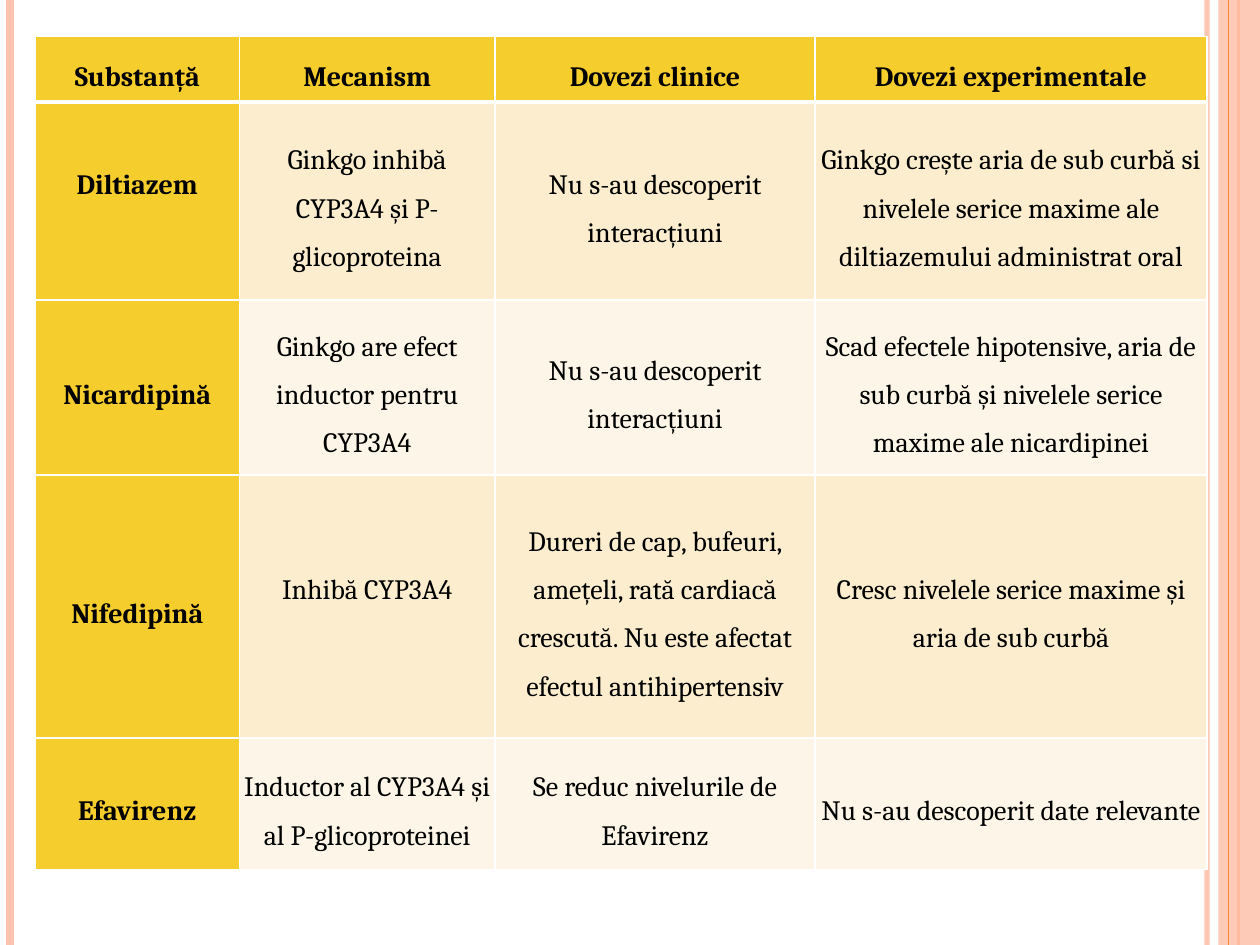
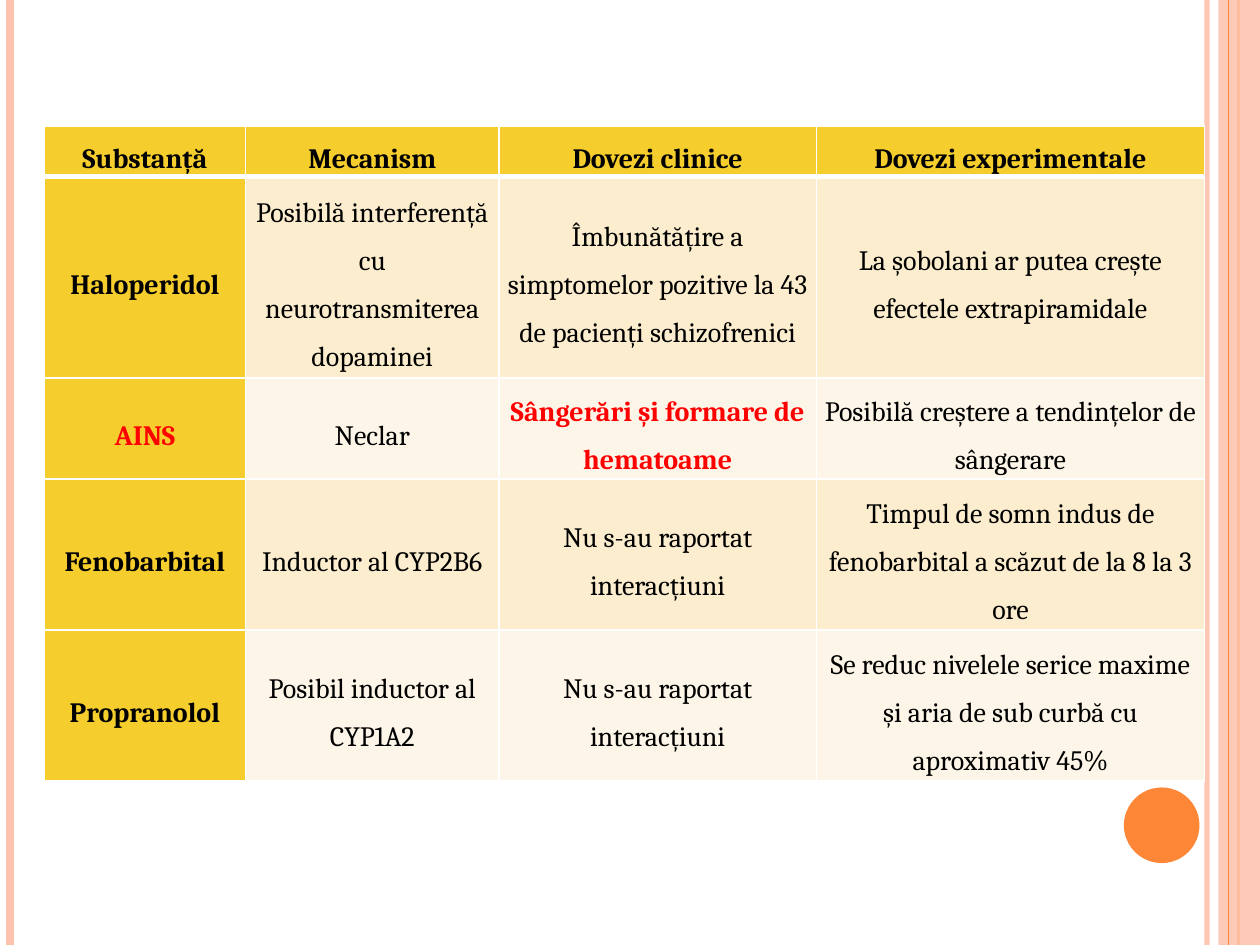
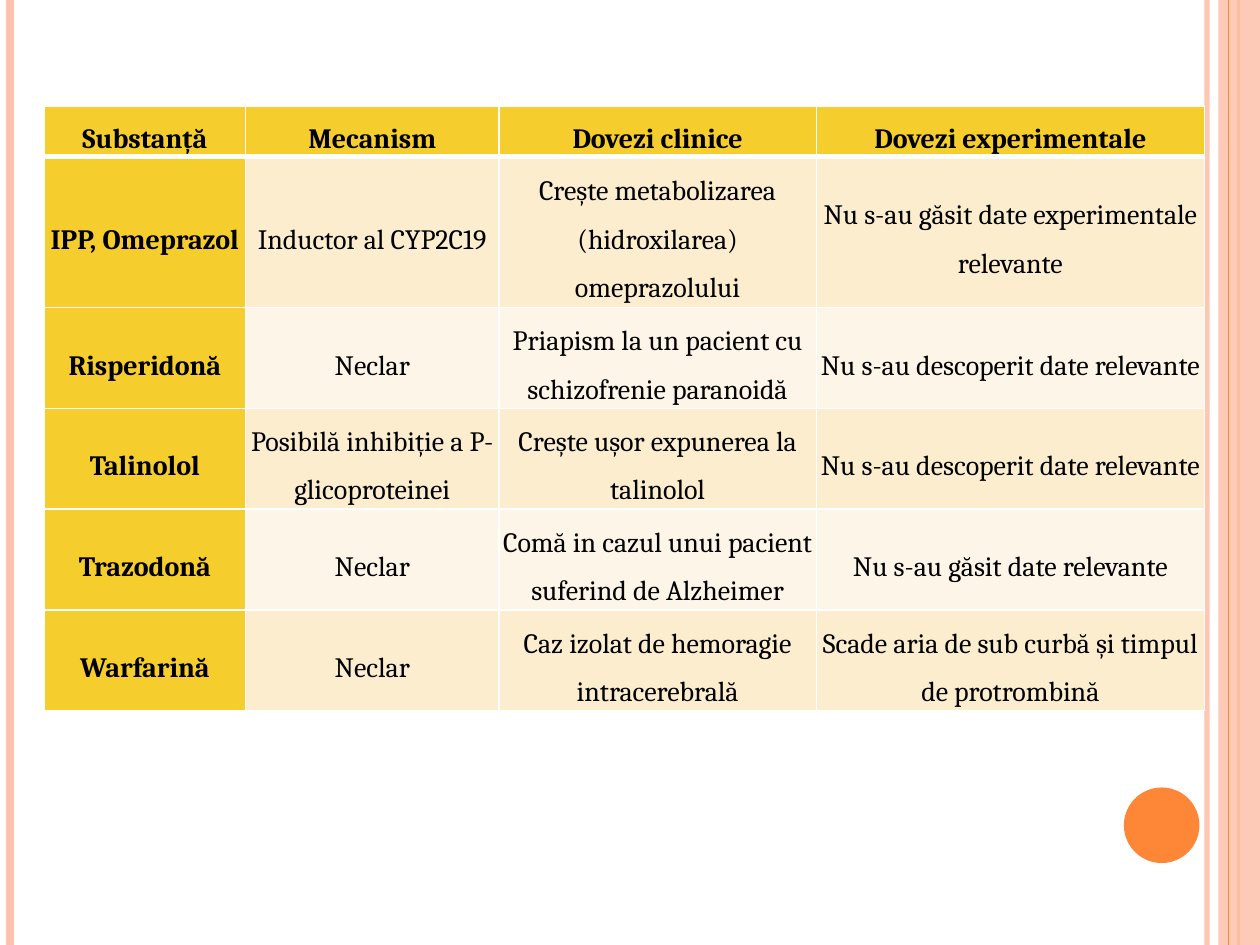
from lxml import etree
from pptx import Presentation
from pptx.dml.color import RGBColor
from pptx.enum.shapes import MSO_CONNECTOR as Link, MSO_SHAPE as Kind
from pptx.enum.text import MSO_ANCHOR as Anchor, PP_ALIGN as Align
from pptx.oxml.ns import qn
from pptx.util import Inches, Pt

PEACH, ORANGE, WHITE = "FEC3AE", "FE8637", "FFFFFF"
GOLD, BANDS = "F5CD2D", ("FBEDCD", "FDF6E8")
BLACK, RED = "000000", "FF0000"
FONT, SIZE = "Cambria", 16
LINE = 0.4

HEADS = ["Substanță", "Mecanism", "Dovezi clinice", "Dovezi experimentale"]
LIFT = {"lift": 0.38}
ALERT = {"bold": True, "color": RED}

HEART = [
    [("Diltiazem", LIFT), "Ginkgo inhibă CYP3A4 și P-glicoproteina",
     "Nu s-au descoperit interacțiuni",
     "Ginkgo crește aria de sub curbă si nivelele serice maxime ale diltiazemului administrat oral"],
    ["Nicardipină", "Ginkgo are efect inductor pentru CYP3A4",
     "Nu s-au descoperit interacțiuni",
     "Scad efectele hipotensive, aria de sub curbă și nivelele serice maxime ale nicardipinei"],
    ["Nifedipină", ("Inhibă CYP3A4", LIFT),
     "Dureri de cap, bufeuri, amețeli, rată cardiacă crescută. Nu este afectat efectul antihipertensiv",
     "Cresc nivelele serice maxime și aria de sub curbă"],
    ["Efavirenz", "Inductor al CYP3A4 și al P-glicoproteinei",
     "Se reduc nivelurile de Efavirenz", "Nu s-au descoperit date relevante"],
]
NERVE = [
    ["Haloperidol", "Posibilă interferență cu neurotransmiterea dopaminei",
     "Îmbunătățire a simptomelor pozitive la 43 de pacienți schizofrenici",
     "La șobolani ar putea crește efectele extrapiramidale"],
    [("AINS", ALERT), "Neclar", ("Sângerări și formare de hematoame", ALERT),
     "Posibilă creștere a tendințelor de sângerare"],
    ["Fenobarbital", "Inductor al CYP2B6", "Nu s-au raportat interacțiuni",
     "Timpul de somn indus de fenobarbital a scăzut de la 8 la 3 ore"],
    ["Propranolol", "Posibil inductor al CYP1A2", "Nu s-au raportat interacțiuni",
     "Se reduc nivelele serice maxime și aria de sub curbă cu aproximativ 45%"],
]
MIXED = [
    ["IPP, Omeprazol", "Inductor al CYP2C19",
     "Crește metabolizarea (hidroxilarea) omeprazolului",
     "Nu s-au găsit date experimentale relevante"],
    ["Risperidonă", "Neclar", "Priapism la un pacient cu schizofrenie paranoidă",
     "Nu s-au descoperit date relevante"],
    ["Talinolol", "Posibilă inhibiție a P-glicoproteinei",
     "Crește ușor expunerea la talinolol", "Nu s-au descoperit date relevante"],
    ["Trazodonă", "Neclar", "Comă in cazul unui pacient suferind de Alzheimer",
     "Nu s-au găsit date relevante"],
    ["Warfarină", "Neclar", "Caz izolat de hemoragie intracerebrală",
     "Scade aria de sub curbă și timpul de protrombină"],
]


def paint(target, color):
    """Give a fill one solid colour."""
    target.solid()
    target.fore_color.rgb = RGBColor.from_string(color)


def fade(shape, share):
    """Set the opacity, in percent, of the colours of a shape."""
    for tone in shape._element.spPr.iter(qn("a:srgbClr")):
        etree.SubElement(tone, qn("a:alpha"), val=str(share * 1000))


def stripe(slide, x, color, width):
    """Draw a full-height vertical line."""
    line = slide.shapes.add_connector(
        Link.STRAIGHT, Inches(x), 0, Inches(x), Inches(7.5))
    paint(line.line.fill, color)
    line.line.width = Pt(width)
    etree.SubElement(line._element.spPr, qn("a:effectLst"))
    return line


def block(slide, kind, box, color):
    """Draw a plain filled shape in a box."""
    shape = slide.shapes.add_shape(kind, *map(Inches, box))
    shape.shadow.inherit = False
    paint(shape.fill, color)
    shape.line.fill.background()
    return shape


def frame(slide, dot):
    """Draw the side stripes and, if asked, the round marker."""
    fade(stripe(slide, 9.58, PEACH, 3), 93)
    stripe(slide, 0.08, PEACH, 4.5)
    stripe(slide, 9.83, ORANGE, 1.5)
    fade(block(slide, Kind.RECTANGLE, (9.67, 0, 0.33, 7.5), PEACH), 87)
    stripe(slide, 9.75, ORANGE, 0.75)
    if dot:
        block(slide, Kind.OVAL, (8.92, 6.25, 0.6, 0.6), ORANGE)


def write(cell, text, bold=False, color=BLACK, lift=0):
    """Put centred text in a cell, raised by a bottom margin if asked."""
    cell.margin_left = cell.margin_right = Inches(0.03)
    cell.margin_top, cell.margin_bottom = 0, Inches(lift)
    cell.vertical_anchor = Anchor.MIDDLE
    para = cell.text_frame.paragraphs[0]
    para.alignment, para.line_spacing = Align.CENTER, 1.5
    run = para.add_run()
    run.text = text
    font = run.font
    font.name, font.size, font.bold = FONT, Pt(SIZE), bold
    font.color.rgb = RGBColor.from_string(color)


def edge(cell, row):
    """Give a cell white borders, heavy below the header."""
    widths = {"L": 1, "R": 1, "T": 3 if row == 1 else 1, "B": 3 if row == 0 else 1}
    for side, width in widths.items():
        line = etree.SubElement(
            cell._tc.get_or_add_tcPr(), qn(f"a:ln{side}"), w=str(Pt(width)))
        fill = etree.SubElement(line, qn("a:solidFill"))
        etree.SubElement(fill, qn("a:srgbClr"), val=WHITE)


def grid(slide, left, top, cols, highs, body):
    """Build the table of substances from its corner and its sizes."""
    rows = [HEADS] + body
    table = slide.shapes.add_table(
        len(rows), len(cols), Inches(left), Inches(top),
        Inches(sum(cols)), Inches(sum(highs))).table
    for col, width in zip(table.columns, cols):
        col.width = Inches(width)
    for r, (items, high) in enumerate(zip(rows, highs)):
        table.rows[r].height = Inches(high)
        for c, item in enumerate(items):
            text, style = item if isinstance(item, tuple) else (item, {})
            cell, lead = table.cell(r, c), r == 0 or c == 0
            write(cell, text, **{"bold": lead, **style})
            edge(cell, r)
            paint(cell.fill, GOLD if lead else BANDS[(r - 1) % 2])


def main():
    """Build the three table slides and save them."""
    deck = Presentation()
    deck.slide_width, deck.slide_height = Inches(10), Inches(7.5)
    wide, slim = (1.62, 2.03, 2.54, 3.11), (1.6, 2.01, 2.52, 3.08)
    pages = [
        (False, 0.28, 0.29, wide, [0.52, 1.57, 1.39, 2.09, 1.04], HEART),
        (True, 0.35, 1, slim, [LINE * n for n in (1, 4, 2, 3, 3)], NERVE),
        (True, 0.35, 0.84, slim, [LINE * n for n in (1, 3, 2, 2, 2, 2)], MIXED),
    ]
    for dot, *spot in pages:
        slide = deck.slides.add_slide(deck.slide_layouts[6])
        frame(slide, dot)
        grid(slide, *spot)
    deck.save("out.pptx")


if __name__ == "__main__":
    main()
